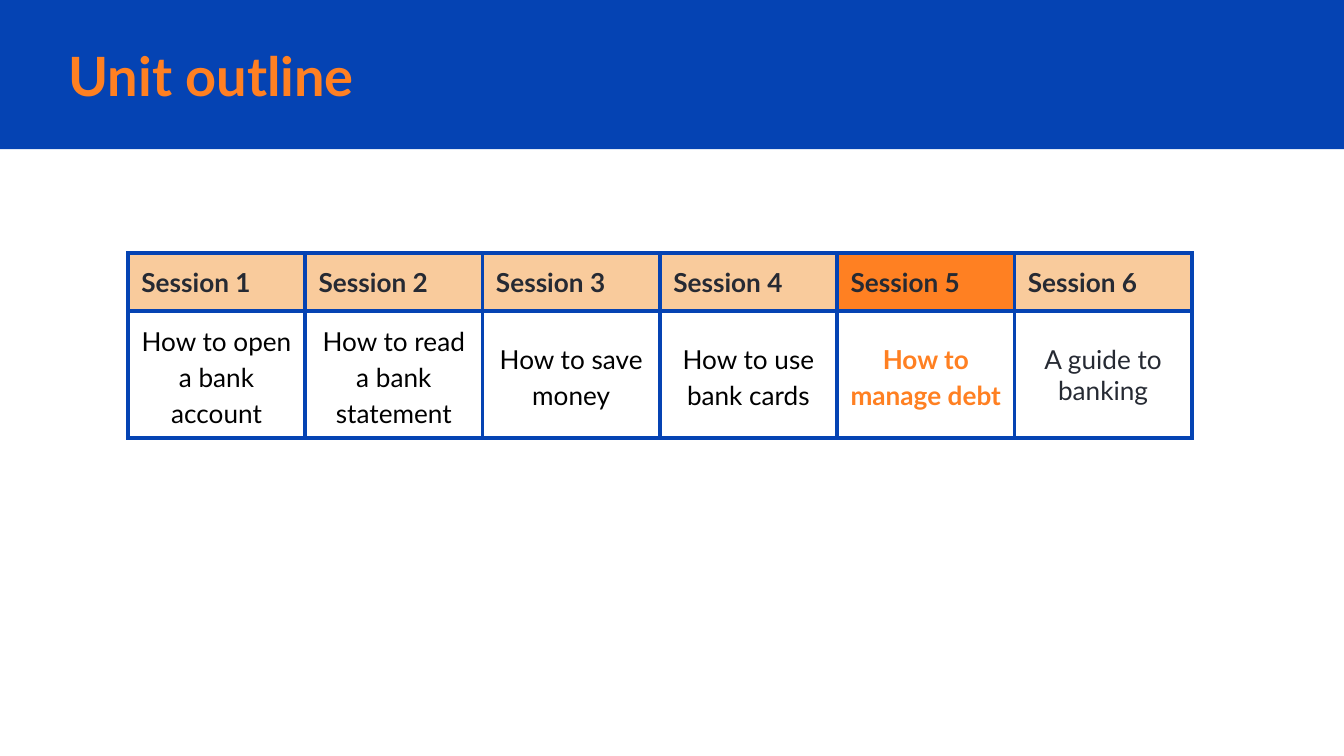
import dataclasses

import pptx
import pptx.dml.color
import pptx.enum.shapes
import pptx.enum.text
import pptx.oxml
import pptx.oxml.ns
import pptx.util

Pt = pptx.util.Pt
ALIGN = pptx.enum.text.PP_ALIGN
ANCHOR = pptx.enum.text.MSO_ANCHOR


@dataclasses.dataclass(frozen=True)
class Theme:
    font: str = "Lato"
    blue: str = "0543B3"
    orange: str = "FF8022"
    peach: str = "F9CB9C"
    dark: str = "262A33"
    black: str = "000000"
    title_size: float = 29
    table_size: float = 14
    border: float = 2.25


THEME = Theme()
CURRENT = 4
SESSIONS = [
    "How to open a bank account",
    "How to read a bank statement",
    "How to save money",
    "How to use bank cards",
    "How to manage debt",
    "A guide to banking",
]


def rgb(color):
    return pptx.dml.color.RGBColor.from_string(color)


def add_run(p, text, size, color, bold):
    r = p.add_run()
    r.text = text
    r.font.name = THEME.font
    r.font.size = Pt(size)
    r.font.bold = bold
    r.font.color.rgb = rgb(color)


def set_margins(box, margin):
    box.margin_left = box.margin_right = Pt(margin)
    box.margin_top = box.margin_bottom = Pt(margin)


def set_borders(cell):
    tc_pr = cell._tc.get_or_add_tcPr()
    for side in "LRTB":
        tc_pr.append(pptx.oxml.parse_xml(
            f'<a:ln{side} {pptx.oxml.ns.nsdecls("a")} w="{Pt(THEME.border)}">'
            f'<a:solidFill><a:srgbClr val="{THEME.blue}"/></a:solidFill>'
            f'</a:ln{side}>'))


def fill_cell(cell, text, color, bold, fill=None, margin=7.2,
              align=ALIGN.LEFT, anchor=ANCHOR.TOP, spacing=None):
    set_borders(cell)
    if fill:
        cell.fill.solid()
        cell.fill.fore_color.rgb = rgb(fill)
    else:
        cell.fill.background()
    set_margins(cell, margin)
    cell.vertical_anchor = anchor
    p = cell.text_frame.paragraphs[0]
    p.alignment = align
    p.line_spacing = spacing
    add_run(p, text, THEME.table_size, color, bold)


def add_header(s, left, top, width, height, text):
    band = s.shapes.add_shape(pptx.enum.shapes.MSO_SHAPE.RECTANGLE,
                              Pt(left), Pt(top), Pt(width), Pt(height))
    band.shadow.inherit = False
    band.fill.solid()
    band.fill.fore_color.rgb = rgb(THEME.blue)
    band.line.fill.background()
    s.shapes._spTree.insert(2, band._element)

    title = s.shapes.title
    title.left, title.top = Pt(left + 29.5), Pt(top + 20)
    title.width, title.height = Pt(609), Pt(40.5)
    tf = title.text_frame
    tf.word_wrap = True
    tf.auto_size = pptx.enum.text.MSO_AUTO_SIZE.NONE
    tf.vertical_anchor = ANCHOR.MIDDLE
    set_margins(tf, 7.2)
    p = tf.paragraphs[0]
    p.alignment = ALIGN.LEFT
    add_run(p, text, THEME.title_size, THEME.orange, True)


def add_outline(s, left, top, width, row_heights):
    table = s.shapes.add_table(2, len(SESSIONS), Pt(left), Pt(top),
                               Pt(width), Pt(sum(row_heights))).table
    table.first_row = table.horz_banding = False
    for row, height in zip(table.rows, row_heights):
        row.height = Pt(height)
    for i, topic in enumerate(SESSIONS):
        table.columns[i].width = Pt(width / len(SESSIONS))
        current = i == CURRENT
        last = i == len(SESSIONS) - 1
        fill_cell(table.cell(0, i), f"Session {i + 1}", THEME.dark, True,
                  fill=THEME.orange if current else THEME.peach)
        color = THEME.orange if current else THEME.dark if last else THEME.black
        fill_cell(table.cell(1, i), topic, color, current,
                  margin=7.2 if last else 5, align=ALIGN.CENTER,
                  anchor=ANCHOR.MIDDLE, spacing=None if last else 1.15)


def main():
    prs = pptx.Presentation()
    prs.slide_width, prs.slide_height = Pt(720), Pt(405)
    s = prs.slides.add_slide(prs.slide_layouts[5])
    add_header(s, 0, 0, 720, 80, "Unit outline")
    add_outline(s, 68.5, 135.5, 570, (31, 68))
    prs.save("out.pptx")


if __name__ == "__main__":
    main()
